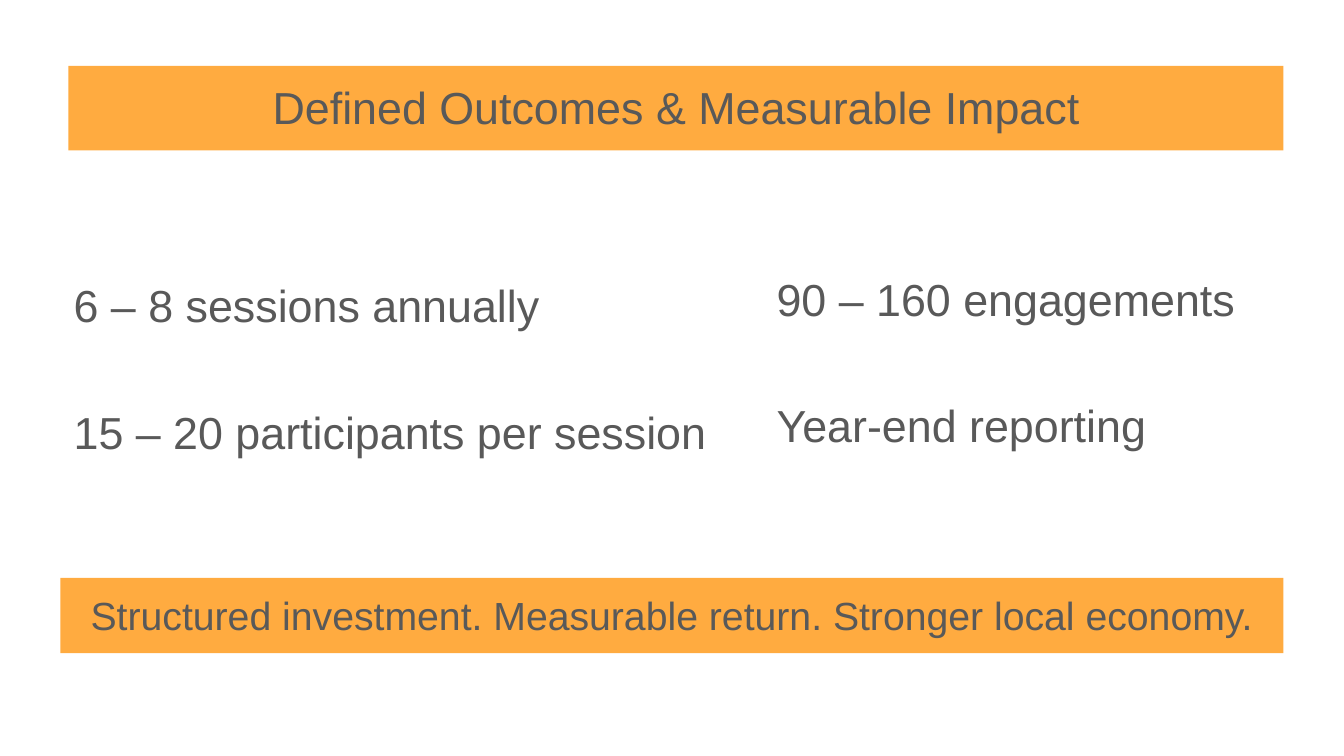
from pptx import Presentation
from pptx.dml.color import RGBColor
from pptx.enum.shapes import MSO_SHAPE
from pptx.enum.text import MSO_ANCHOR, PP_ALIGN
from pptx.util import Pt

# Content: boxes are left, top, width, height in points
BANNERS = [
    ("Defined Outcomes & Measurable Impact", 24, (36.72, 35.28, 650.88, 45.36)),
    ("Structured investment. Measurable return. Stronger local economy.", 21,
     (32.4, 309.6, 655.2, 40.32)),
]
COLUMNS = [
    (["6 – 8 sessions annually", "15 – 20 participants per session"],
     (32.4, 137.52, 357.84, 163.44)),
    (["90 – 160 engagements", "Year-end reporting"],
     (408.96, 133.92, 314.64, 163.44)),
]
ORANGE, GRAY = "FFAB40", "595959"
MARGIN = 7.2
BODY_SIZE = 24
BODY_GAP = 34.5


def color(value):
    return RGBColor.from_string(value)


def apply_format(target, values):
    for name, value in values.items():
        setattr(target, name, value)


def write_text(shape, lines, size, paragraph_format, gap=0):
    frame = shape.text_frame
    apply_format(frame, {
        "word_wrap": True, "vertical_anchor": MSO_ANCHOR.TOP,
        "margin_left": Pt(MARGIN), "margin_right": Pt(MARGIN),
        "margin_top": Pt(MARGIN), "margin_bottom": Pt(MARGIN),
    })
    for index, line in enumerate(lines):
        paragraph = frame.add_paragraph() if index else frame.paragraphs[0]
        paragraph.text = line
        apply_format(paragraph, paragraph_format)
        if index:
            paragraph.space_before = Pt(gap)
        apply_format(paragraph.font, {"name": "Arial", "size": Pt(size)})
        paragraph.font.color.rgb = color(GRAY)


presentation = Presentation()
apply_format(presentation, {"slide_width": Pt(720), "slide_height": Pt(405)})
slide = presentation.slides.add_slide(presentation.slide_layouts[6])

# Orange banners
for text, size, box in BANNERS:
    shape = slide.shapes.add_shape(MSO_SHAPE.RECTANGLE, *map(Pt, box))
    shape.shadow.inherit = False
    shape.fill.solid()
    shape.fill.fore_color.rgb = color(ORANGE)
    shape.line.fill.background()
    write_text(shape, [text], size, {"alignment": PP_ALIGN.CENTER})

# Outcome columns
for lines, box in COLUMNS:
    shape = slide.shapes.add_textbox(*map(Pt, box))
    write_text(shape, lines, BODY_SIZE,
               {"alignment": PP_ALIGN.LEFT, "line_spacing": 1.15}, BODY_GAP)

presentation.save("out.pptx")
